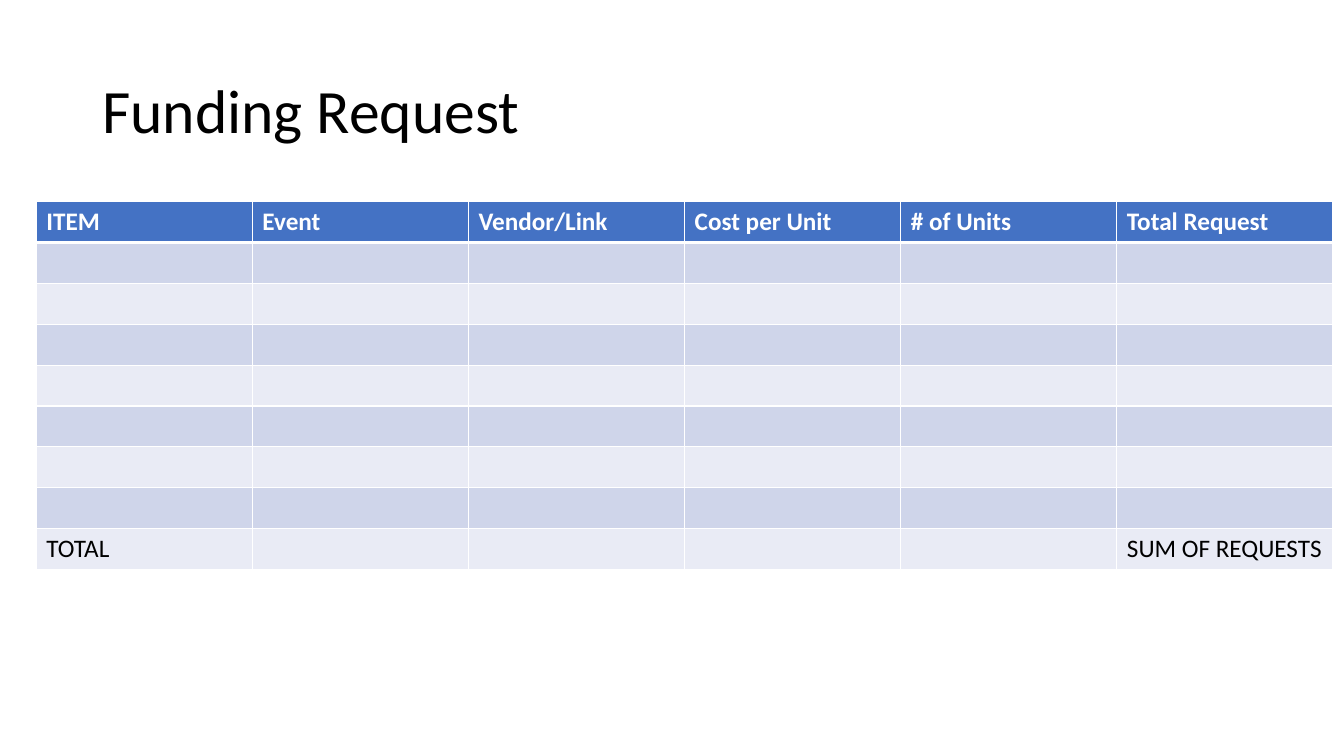
from dataclasses import dataclass

from lxml.etree import SubElement
from pptx import Presentation
from pptx.dml.color import RGBColor
from pptx.enum.text import MSO_ANCHOR
from pptx.oxml.ns import qn
from pptx.util import Pt


@dataclass(frozen=True)
class Theme:
    font: str = "Calibri"
    title_size: int = 44
    table_size: int = 18
    ink: str = "000000"
    white: str = "FFFFFF"
    header: str = "4472C4"
    band_dark: str = "CFD5EA"
    band_light: str = "E9EBF5"


theme = Theme()


def write(para, text, size, color, bold=False):
    span = para.add_run()
    span.text = text
    formats = {"name": theme.font, "size": Pt(size), "bold": bold}
    for name, value in formats.items():
        setattr(span.font, name, value)
    span.font.color.rgb = RGBColor.from_string(color)


def add_border(cell, side, width):
    line = SubElement(cell._tc.get_or_add_tcPr(), qn(f"a:ln{side}"), w=str(Pt(width)))
    fill = SubElement(line, qn("a:solidFill"))
    SubElement(fill, qn("a:srgbClr"), val=theme.white)


deck = Presentation()
deck.slide_width, deck.slide_height = Pt(960), Pt(540)
page = deck.slides.add_slide(deck.slide_layouts[6])

# Title
box = page.shapes.add_textbox(Pt(66), Pt(28.75), Pt(828), Pt(104.4))
frame = box.text_frame
for name, value in {"word_wrap": True, "vertical_anchor": MSO_ANCHOR.MIDDLE}.items():
    setattr(frame, name, value)
para = frame.paragraphs[0]
para.line_spacing = 0.9
write(para, "Funding Request", theme.title_size, theme.ink)

# Request table: header, seven empty rows, total
headings = ["ITEM", "Event", "Vendor/Link", "Cost per Unit", "# of Units", "Total Request"]
blank_row = [""] * len(headings)
total_row = ["TOTAL", "", "", "", "", "SUM OF REQUESTS"]
rows = [headings] + [blank_row] * 7 + [total_row]
column_width, row_height = 154.4, 29.2

table = page.shapes.add_table(
    len(rows), len(headings), Pt(25.9), Pt(144),
    Pt(column_width * len(headings)), Pt(row_height * len(rows)),
).table
for column in table.columns:
    column.width = Pt(column_width)
for row in table.rows:
    row.height = Pt(row_height)

for row_index, texts in enumerate(rows):
    is_header = row_index == 0
    if is_header:
        fill_color = theme.header
    else:
        fill_color = theme.band_dark if row_index % 2 else theme.band_light
    # A heavier rule separates the header from the body
    borders = {"L": 1, "R": 1, "T": 3 if row_index == 1 else 1, "B": 3 if is_header else 1}

    for column_index, text in enumerate(texts):
        cell = table.cell(row_index, column_index)
        for side, width in borders.items():
            add_border(cell, side, width)
        cell.fill.solid()
        cell.fill.fore_color.rgb = RGBColor.from_string(fill_color)
        if text:
            text_color = theme.white if is_header else theme.ink
            write(cell.text_frame.paragraphs[0], text, theme.table_size, text_color, is_header)

deck.save("out.pptx")
